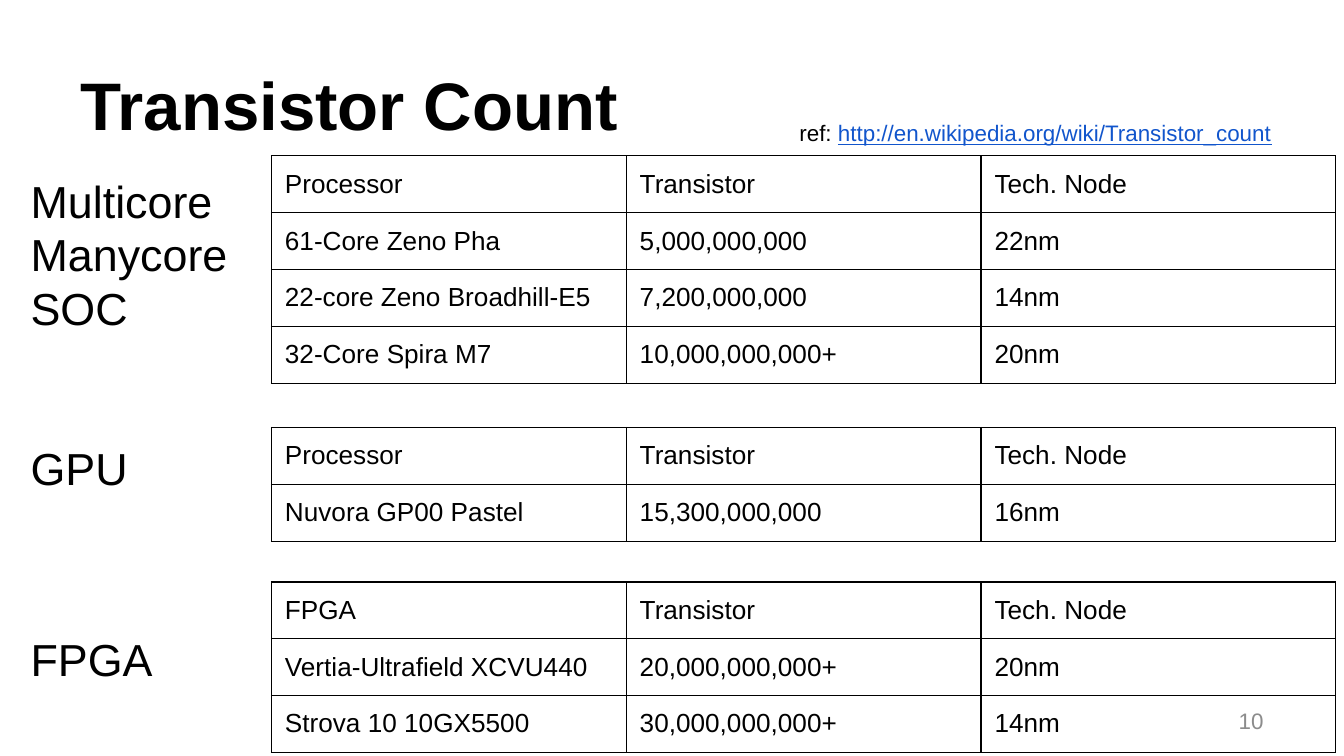
from lxml import etree
from pptx import Presentation
from pptx.dml.color import RGBColor
from pptx.enum.text import MSO_ANCHOR, PP_ALIGN
from pptx.oxml.ns import qn
from pptx.util import Inches, Pt

TOP, MID, LOW = MSO_ANCHOR.TOP, MSO_ANCHOR.MIDDLE, MSO_ANCHOR.BOTTOM
LEFT, RIGHT = PP_ALIGN.LEFT, PP_ALIGN.RIGHT
FONT = "Arial"
HEX = {"ink": "000000", "link": "1155CC", "page": "8C8C8C"}
PAD = Inches(0.1)


def write(frame, *lines, size=14, color="ink", bold=False, align=LEFT,
          anchor=TOP, pad=PAD):
    """Fill a text frame; each line is a string or a list of (text, color)."""
    frame.word_wrap = True
    frame.vertical_anchor = anchor
    frame.margin_left = frame.margin_right = PAD
    frame.margin_top = frame.margin_bottom = pad
    for i, line in enumerate(lines):
        para = frame.add_paragraph() if i else frame.paragraphs[0]
        para.alignment = align
        for text, tint in [(line, color)] if isinstance(line, str) else line:
            run = para.add_run()
            run.text = text
            font = run.font
            font.name, font.size, font.bold = FONT, Pt(size), bold
            font.color.rgb = RGBColor.from_string(HEX[tint])
            font.underline = tint == "link"


def border(cell):
    props = cell._tc.get_or_add_tcPr()
    for side in ("lnL", "lnR", "lnT", "lnB"):
        line = etree.SubElement(props, qn(f"a:{side}"), w=str(Pt(0.75)))
        fill = etree.SubElement(line, qn("a:solidFill"))
        etree.SubElement(fill, qn("a:srgbClr"), val=HEX["ink"])


prs = Presentation()
prs.slide_width = Inches(10)
prs.slide_height = prs.slide_width * 9 // 16
slide = prs.slides.add_slide(prs.slide_layouts[6])
shapes = slide.shapes

# Title, row labels and reference
ref = [("ref: ", "ink"), ("http://en.wikipedia.org/wiki/Transistor_count", "link")]
label = {"size": 24}
boxes = [
    ((0.5, 0.23, 9, 0.94), ["Transistor Count"], {"size": 36, "bold": True, "anchor": LOW}),
    ((0.13, 1.19, 1.86, 1.66), ["Multicore", "Manycore", "SOC"], label),
    ((0.13, 3.18, 1.24, 0.75), ["GPU"], label),
    ((0.13, 4.6, 1.47, 0.75), ["FPGA"], label),
    ((5.85, 0.79, 4, 0.37), [ref], {"size": 12}),
]
for place, lines, style in boxes:
    box = shapes.add_textbox(*map(Inches, place))
    write(box.text_frame, *lines, **style)

# Tables: top edge, first heading, rows
tables = [
    (1.16, "Processor", [
        ("61-Core Zeno Pha", "5,000,000,000", "22nm"),
        ("22-core Zeno Broadhill-E5", "7,200,000,000", "14nm"),
        ("32-Core Spira M7", "10,000,000,000+", "20nm"),
    ]),
    (3.18, "Processor", [("Nuvora GP00 Pastel", "15,300,000,000", "16nm")]),
    (4.33, "FPGA", [
        ("Vertia-Ultrafield XCVU440", "20,000,000,000+", "20nm"),
        ("Strova 10 10GX5500", "30,000,000,000+", "14nm"),
    ]),
]
WIDE, HIGH = 2.64, 0.42
for top, head, rows in tables:
    rows = [(head, "Transistor", "Tech. Node")] + rows
    count = len(rows)
    grid = shapes.add_table(count, 3, Inches(2.02), Inches(top),
                            Inches(3 * WIDE), Inches(count * HIGH)).table
    grid.first_row = grid.horz_banding = False
    for col in grid.columns:
        col.width = Inches(WIDE)
    for r, row in enumerate(rows):
        grid.rows[r].height = Inches(HIGH)
        for c, text in enumerate(row):
            cell = grid.cell(r, c)
            border(cell)
            cell.fill.background()
            cell.margin_left = cell.margin_right = cell.margin_top = PAD
            cell.margin_bottom = Inches(0.09)
            write(cell.text_frame, text)

# Page number
page = shapes.add_textbox(Inches(7.17), Inches(5.21), Inches(2.33), Inches(0.3))
write(page.text_frame, "10", size=12, color="page", align=RIGHT,
      anchor=MID, pad=Inches(0.05))

prs.save("out.pptx")
